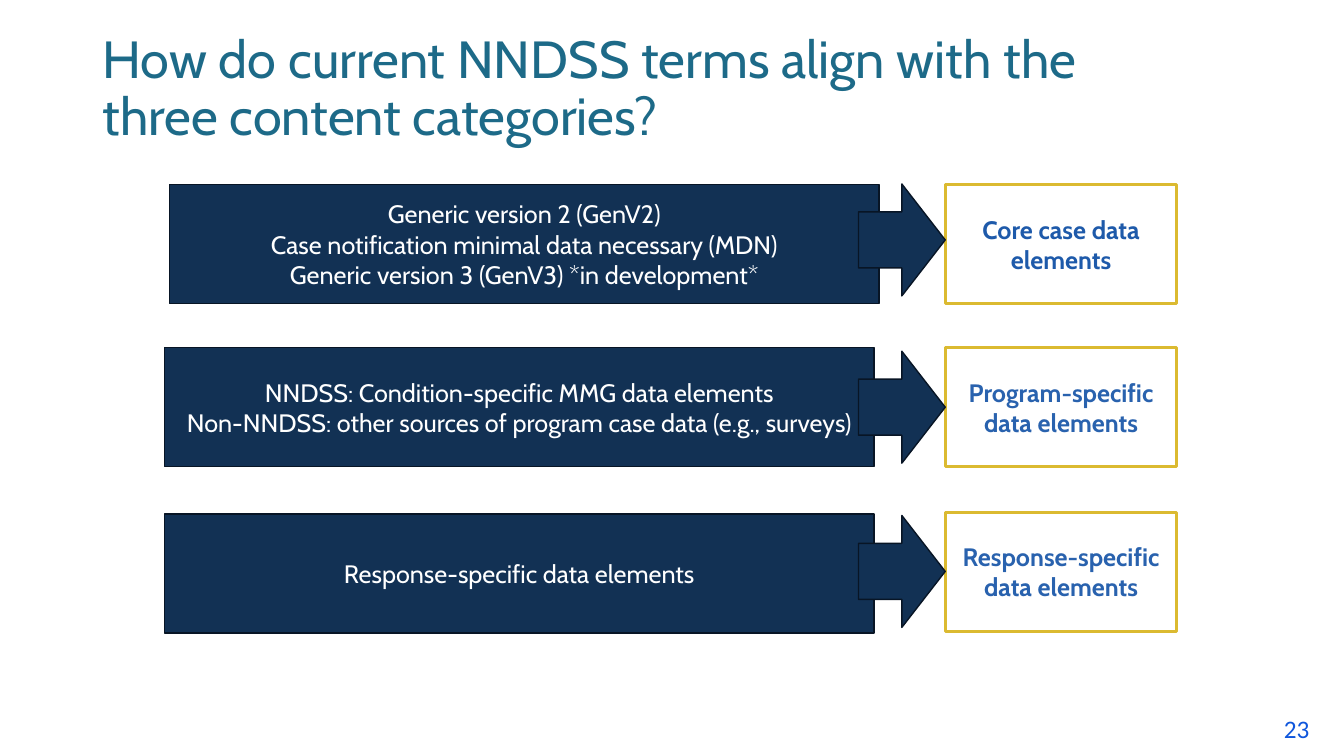
from pptx import Presentation
from pptx.dml.color import RGBColor
from pptx.enum.shapes import MSO_SHAPE
from pptx.enum.text import MSO_ANCHOR, PP_ALIGN
from pptx.util import Pt

RECTANGLE, ARROW = MSO_SHAPE.RECTANGLE, MSO_SHAPE.RIGHT_ARROW
TOP, MIDDLE = MSO_ANCHOR.TOP, MSO_ANCHOR.MIDDLE
LEFT, CENTER = PP_ALIGN.LEFT, PP_ALIGN.CENTER

NAVY = RGBColor(0x12, 0x31, 0x54)
NAVY_EDGE = RGBColor(0x08, 0x15, 0x25)
GOLD = RGBColor(0xDB, 0xBA, 0x31)
TEAL = RGBColor(0x1D, 0x6A, 0x88)
CORE_BLUE = RGBColor(0x1E, 0x5A, 0xAA)
SPECIFIC_BLUE = RGBColor(0x29, 0x62, 0xAE)
PAGE_BLUE = RGBColor(0x0F, 0x56, 0xDC)
WHITE = RGBColor(0xFF, 0xFF, 0xFF)


class SlideBuilder:
    """Holds the text style and the current slide."""

    font = "Cabin"
    size = 18

    def __init__(self, page):
        self.page = page

    def fill_text(self, box, lines, color, size=None, font=None, bold=False,
                  align=CENTER, anchor=MIDDLE, spacing=None):
        frame = box.text_frame
        frame.word_wrap = True
        frame.vertical_anchor = anchor
        frame.text = "\n".join(lines)
        for para in frame.paragraphs:
            para.alignment = align
            para.line_spacing = spacing
            para.font.name = font or self.font
            para.font.size = Pt(size or self.size)
            para.font.bold = bold
            para.font.color.rgb = color

    def text(self, left, top, width, height, line, color, **style):
        box = self.page.shapes.add_textbox(
            Pt(left), Pt(top), Pt(width), Pt(height))
        self.fill_text(box, [line], color, align=LEFT, **style)

    def shape(self, kind, left, top, width, height, fill, edge, weight):
        shape = self.page.shapes.add_shape(
            kind, Pt(left), Pt(top), Pt(width), Pt(height))
        shape.shadow.inherit = False
        if fill is None:
            shape.fill.background()
        else:
            shape.fill.solid()
            shape.fill.fore_color.rgb = fill
        shape.line.color.rgb = edge
        shape.line.width = Pt(weight)
        return shape

    def terms(self, left, top, lines):
        box = self.shape(RECTANGLE, left, top, 507, 85, NAVY, NAVY_EDGE, 1)
        self.fill_text(box, lines, WHITE)

    def category(self, top, label, color):
        box = self.shape(RECTANGLE, 675.4, top, 165, 85, None, GOLD, 2.25)
        self.fill_text(box, [label], color, bold=True)

    def arrow(self, top):
        self.shape(ARROW, 613.2, top, 62, 80, NAVY, NAVY_EDGE, 1)


# Terms left, terms top, term lines, category top, category, colour, arrow top
ROWS = [
    (121, 131.8,
     ["Generic version 2 (GenV2)",
      "Case notification minimal data necessary (MDN)",
      "Generic version 3 (GenV3) *in development*"],
     131.8, "Core case data elements", CORE_BLUE, 131.4),
    (117.4, 248.4,
     ["NNDSS: Condition-specific MMG data elements",
      "Non-NNDSS: other sources of program case data (e.g., surveys)"],
     248.4, "Program-specific data elements", SPECIFIC_BLUE, 250.9),
    (117.4, 367.2,
     ["Response-specific data elements"],
     365.8, "Response-specific data elements", SPECIFIC_BLUE, 368.2),
]


def main():
    deck = Presentation()
    deck.slide_width, deck.slide_height = Pt(960), Pt(540)
    builder = SlideBuilder(deck.slides.add_slide(deck.slide_layouts[6]))

    # Title
    builder.text(66.2, 28.8, 764, 71.3,
                 "How do current NNDSS terms align with the "
                 "three content categories?",
                 TEAL, size=37.3, spacing=0.9)

    # Terms, the category they align with, and the arrow between them
    for left, top, lines, category_top, label, color, arrow_top in ROWS:
        builder.terms(left, top, lines)
        builder.category(category_top, label, color)
        builder.arrow(arrow_top)

    # Page number
    builder.text(910, 506.2, 39, 24.5, "23", PAGE_BLUE,
                 font="Calibri", anchor=TOP)

    deck.save("out.pptx")


if __name__ == "__main__":
    main()
